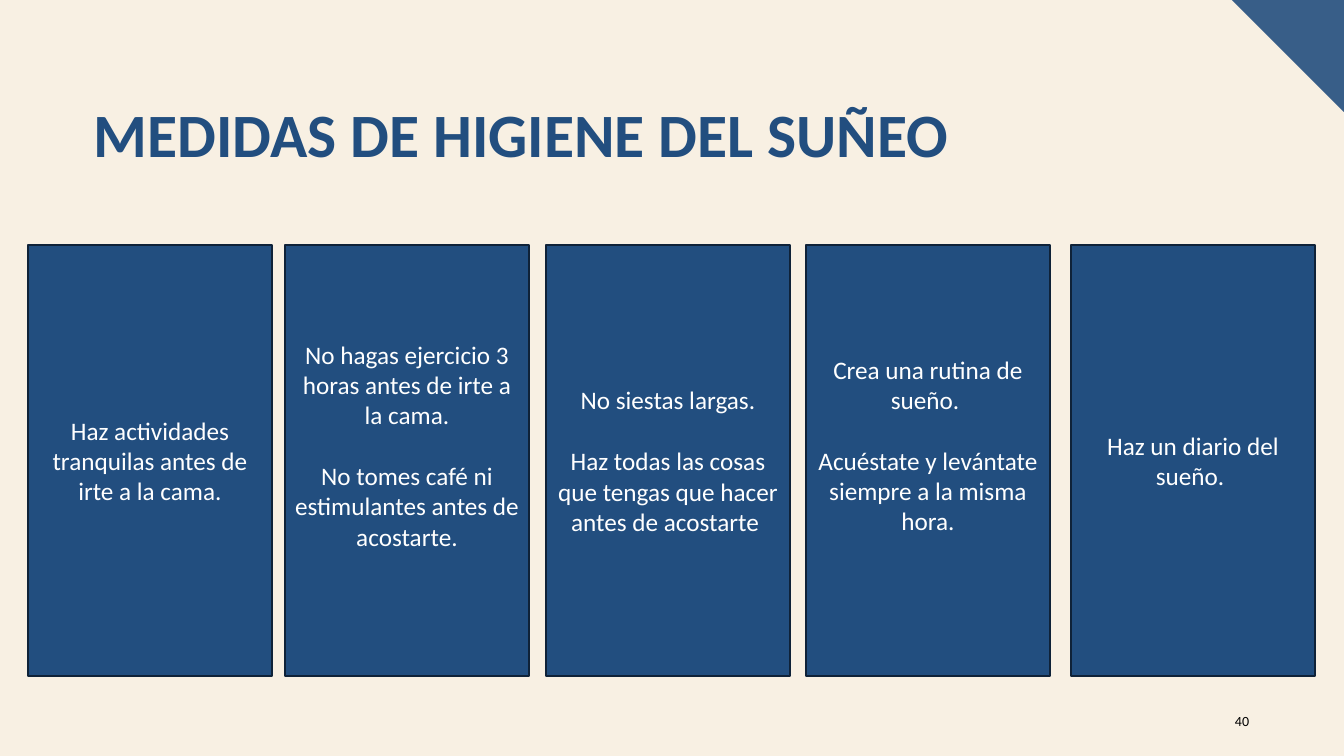
from dataclasses import dataclass

from pptx import Presentation
from pptx.dml.color import RGBColor
from pptx.enum.shapes import MSO_SHAPE as Shape
from pptx.enum.text import MSO_ANCHOR as Anchor, PP_ALIGN as Align
from pptx.slide import Slide
from pptx.text.text import TextFrame
from pptx.util import Emu, Pt

SLIDE_WIDTH, SLIDE_HEIGHT = 1344, 756
CORNER_SIZE = 112
CARD_TOP, CARD_WIDTH, CARD_HEIGHT = 245, 244, 431
CARD_TEXT_SIZE = 18
PARAGRAPH_GAP = 22
FONT = "Calibri"
CREAM, BLUE, CORNER_BLUE, OUTLINE = "F8F0E3", "224E7F", "385E88", "0F2238"
WHITE, BLACK = "FFFFFF", "000000"


@dataclass(frozen=True)
class Card:
    left: int
    paragraphs: tuple[str, ...]
    bottom_margin: int = 5


CARDS = (
    Card(28, ("Haz actividades tranquilas antes de irte a la cama.",)),
    Card(285, ("No hagas ejercicio 3 horas antes de irte a la cama.",
               "No tomes café ni estimulantes antes de acostarte."), 36),
    Card(546, ("No siestas largas.",
               "Haz todas las cosas que tengas que hacer antes de acostarte ")),
    Card(806, ("Crea una rutina de sueño. ",
               "Acuéstate y levántate siempre a la misma hora."), 36),
    Card(1071, ("Haz un diario del sueño. ",)),
)


def px(length: int) -> Emu:
    return Emu(round(length * 914400 / 100.8))


def color(value: str) -> RGBColor:
    return RGBColor.from_string(value)


def write(frame: TextFrame, paragraphs: tuple[str, ...], size: int, text_color: str,
          align: Align, bold: bool = False, line_spacing: float = 1.0) -> None:
    frame.word_wrap = True
    for index, text in enumerate(paragraphs):
        paragraph = frame.add_paragraph() if index else frame.paragraphs[0]
        paragraph.alignment = align
        paragraph.line_spacing = line_spacing
        if index:
            paragraph.space_before = Pt(PARAGRAPH_GAP)
        run = paragraph.add_run()
        run.text = text
        run.font.name = FONT
        run.font.size = Pt(size)
        run.font.bold = bold
        run.font.color.rgb = color(text_color)


def add_corner(slide: Slide) -> None:
    left = SLIDE_WIDTH - CORNER_SIZE
    builder = slide.shapes.build_freeform(px(left), 0)
    builder.add_line_segments(
        [(px(SLIDE_WIDTH), 0), (px(SLIDE_WIDTH), px(CORNER_SIZE))], close=True)
    corner = builder.convert_to_shape()
    corner.shadow.inherit = False
    corner.fill.solid()
    corner.fill.fore_color.rgb = color(CORNER_BLUE)
    corner.line.fill.background()


def add_title(slide: Slide, text: str) -> None:
    box = slide.shapes.add_textbox(px(84), px(99), px(1176), px(146))
    write(box.text_frame, (text,), 44, BLUE, Align.LEFT, bold=True, line_spacing=0.9)


def add_page_number(slide: Slide, number: str) -> None:
    box = slide.shapes.add_textbox(px(1209), px(701), px(50), px(40))
    box.text_frame.vertical_anchor = Anchor.MIDDLE
    write(box.text_frame, (number,), 10, BLACK, Align.RIGHT)


def add_card(slide: Slide, card: Card) -> None:
    shape = slide.shapes.add_shape(
        Shape.RECTANGLE, px(card.left), px(CARD_TOP), px(CARD_WIDTH), px(CARD_HEIGHT))
    shape.shadow.inherit = False
    shape.fill.solid()
    shape.fill.fore_color.rgb = color(BLUE)
    shape.line.color.rgb = color(OUTLINE)
    shape.line.width = Pt(1)
    frame = shape.text_frame
    frame.vertical_anchor = Anchor.MIDDLE
    frame.margin_bottom = px(card.bottom_margin)
    write(frame, card.paragraphs, CARD_TEXT_SIZE, WHITE, Align.CENTER)


def main() -> None:
    presentation = Presentation()
    presentation.slide_width = px(SLIDE_WIDTH)
    presentation.slide_height = px(SLIDE_HEIGHT)
    slide = presentation.slides.add_slide(presentation.slide_layouts[6])
    slide.background.fill.solid()
    slide.background.fill.fore_color.rgb = color(CREAM)
    add_corner(slide)
    add_title(slide, "MEDIDAS DE HIGIENE DEL SUÑEO")
    add_page_number(slide, "40")
    for card in CARDS:
        add_card(slide, card)
    presentation.save("out.pptx")


if __name__ == "__main__":
    main()
